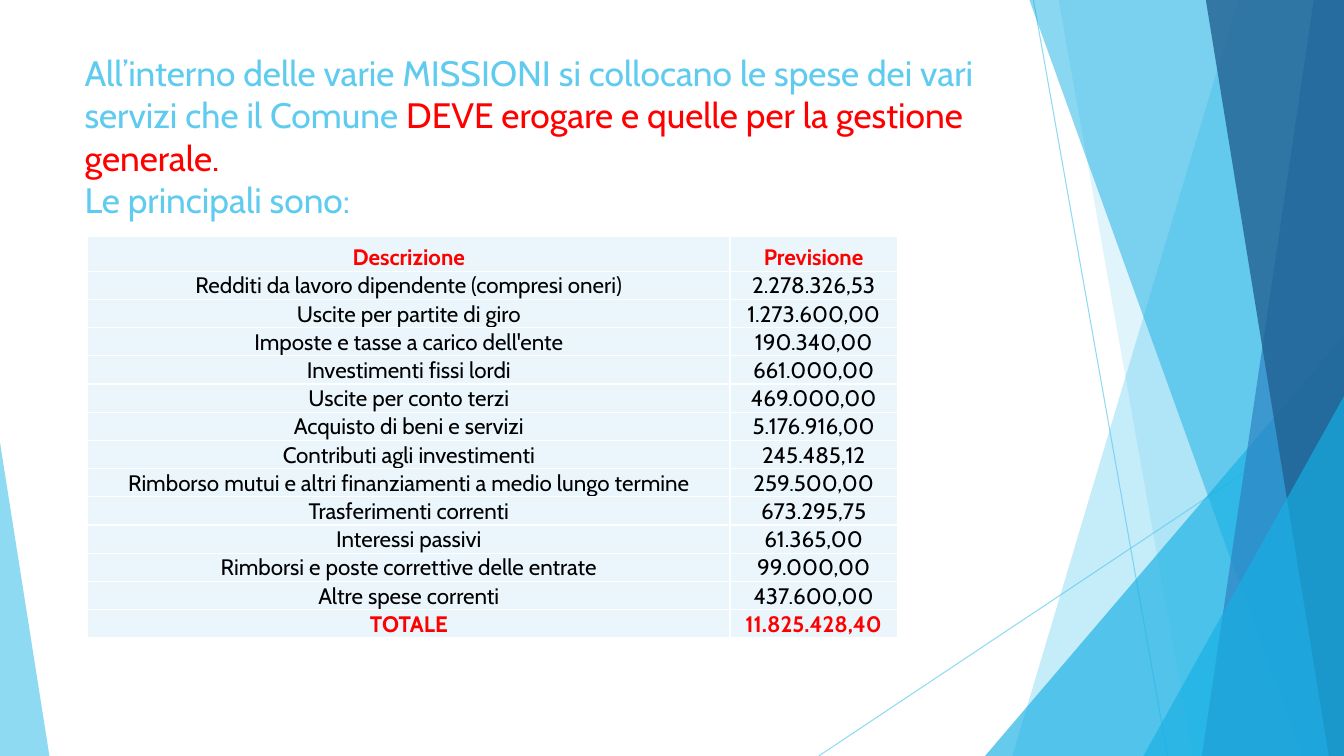
from collections import namedtuple

from lxml.etree import SubElement
from pptx import Presentation
from pptx.dml.color import RGBColor
from pptx.enum.shapes import MSO_CONNECTOR as Connector, MSO_SHAPE as Preset
from pptx.enum.text import MSO_ANCHOR as Anchor, PP_ALIGN as Align
from pptx.oxml.ns import qn
from pptx.util import Pt

EMU_PER_PX = 9144
FONT = "Cabin"
COLOURS = {
    "sky": "5FCBEF",
    "cyan": "17B0E4",
    "blue": "2E83C3",
    "navy": "226292",
    "red": "FF0000",
    "black": "000000",
    "white": "FFFFFF",
    "cell": "EAF6FC",
}
Box = namedtuple("Box", "left top width height")

PAGE = Box(0, 0, 1333, 750)
RIGHT_BAND = Box(812, 0, 521, 750)
LEFT_WEDGE = Box(0, 439, 49, 311)
TITLE = Box(74, 46, 940, 144)
TABLE = Box(87, 235, 803, 398)

TITLE_SPANS = [
    ("All’interno delle varie MISSIONI si collocano le spese dei vari servizi che il Comune ", "sky"),
    ("DEVE erogare e quelle per la gestione generale.", "red"),
    (None, None),
    ("Le principali sono:", "sky"),
]
EXPENSES = [
    ("Descrizione", "Previsione"),
    ("Redditi da lavoro dipendente (compresi oneri)", "2.278.326,53"),
    ("Uscite per partite di giro", "1.273.600,00"),
    ("Imposte e tasse a carico dell'ente", "190.340,00"),
    ("Investimenti fissi lordi", "661.000,00"),
    ("Uscite per conto terzi", "469.000,00"),
    ("Acquisto di beni e servizi", "5.176.916,00"),
    ("Contributi agli investimenti", "245.485,12"),
    ("Rimborso mutui e altri finanziamenti a medio lungo termine", "259.500,00"),
    ("Trasferimenti correnti", "673.295,75"),
    ("Interessi passivi", "61.365,00"),
    ("Rimborsi e poste correttive delle entrate", "99.000,00"),
    ("Altre spese correnti", "437.600,00"),
    ("TOTALE", "11.825.428,40"),
]


def px(*lengths):
    return [length * EMU_PER_PX for length in lengths]


def rgb(name):
    return RGBColor.from_string(COLOURS[name])


def set_values(target, values):
    for name, value in values.items():
        setattr(target, name, value)


def set_opacity(shape, percent):
    for colour in shape.element.spPr.iter(qn("a:srgbClr")):
        SubElement(colour, qn("a:alpha"), val=str(percent * 1000))


def paint(shape, colour, opacity):
    shape.shadow.inherit = False
    shape.fill.solid()
    shape.fill.fore_color.rgb = rgb(colour)
    shape.line.fill.background()
    set_opacity(shape, opacity)


def add_span(para, text, colour, size, bold=False):
    span = para.add_run()
    span.text = text
    set_values(span.font, {"name": FONT, "size": Pt(size), "bold": bold})
    span.font.color.rgb = rgb(colour)


def add_ray(page, box, start, end):
    ends = px(box.left + start[0], box.top + start[1], box.left + end[0], box.top + end[1])
    ray = page.shapes.add_connector(Connector.STRAIGHT, *ends)
    ray.line.width = Pt(0.75)
    ray.line.color.rgb = rgb("sky")
    set_opacity(ray, 70)
    SubElement(ray.element.spPr, qn("a:effectLst"))


def add_panel(page, box, top_x, bottom_x, colour, opacity):
    right, bottom = box.left + box.width, box.top + box.height
    builder = page.shapes.build_freeform(box.left + top_x, box.top, scale=EMU_PER_PX)
    builder.add_line_segments([(right, box.top), (right, bottom), (box.left + bottom_x, bottom)])
    paint(builder.convert_to_shape(), colour, opacity)


def add_wedge(page, box, peak, colour, opacity):
    wedge = page.shapes.add_shape(Preset.ISOSCELES_TRIANGLE, *px(*box))
    wedge.adjustments[0] = peak
    paint(wedge, colour, opacity)


def add_corner_wedge(page, box, x, y):
    corner = Box(box.left + x, box.top + y, box.width - x, box.height - y)
    add_wedge(page, corner, 1, "cyan", 66)


def add_right_band(page, box):
    add_ray(page, box, (213, 0), (346, box.height))
    add_ray(page, box, (box.width, 403), (0, box.height))
    add_panel(page, box, 416, 192, "sky", 36)
    add_panel(page, box, 238, 371, "sky", 20)
    add_corner_wedge(page, box, 165, 333)
    add_panel(page, box, 209, 479, "cyan", 50)
    add_panel(page, box, 491, 380, "blue", 70)
    add_panel(page, box, 384, 506, "navy", 80)
    add_corner_wedge(page, box, 322, 393)


def add_title(page, box):
    frame = page.shapes.add_textbox(*px(*box)).text_frame
    set_values(frame, {"word_wrap": True, "vertical_anchor": Anchor.TOP})
    para = frame.paragraphs[0]
    for text, colour in TITLE_SPANS:
        if text is None:
            para.add_line_break()
        else:
            add_span(para, text, colour, 25.2)


def add_borders(cell):
    properties = cell._tc.get_or_add_tcPr()
    for side in "LRTB":
        border = SubElement(properties, qn(f"a:ln{side}"), w=str(Pt(1)))
        fill = SubElement(border, qn("a:solidFill"))
        SubElement(fill, qn("a:srgbClr"), val=COLOURS["white"])


def fill_cell(cell, text, emphasised):
    inset = px(1)[0]
    set_values(cell, {
        "vertical_anchor": Anchor.BOTTOM,
        "margin_left": inset,
        "margin_right": inset,
        "margin_top": inset,
        "margin_bottom": 0,
    })
    add_borders(cell)
    cell.fill.solid()
    cell.fill.fore_color.rgb = rgb("cell")
    para = cell.text_frame.paragraphs[0]
    para.alignment = Align.CENTER
    add_span(para, text, "red" if emphasised else "black", 16, emphasised)


def add_expense_table(page, box):
    last = len(EXPENSES) - 1
    table = page.shapes.add_table(len(EXPENSES), 2, *px(*box)).table
    set_values(table, {"first_row": False, "horz_banding": False})
    amount_width, row_height = 166, 28
    for column, width in zip(table.columns, px(box.width - amount_width, amount_width)):
        column.width = width
    header_height = box.height - last * row_height
    for index, (row, texts) in enumerate(zip(table.rows, EXPENSES)):
        row.height = px(row_height if index else header_height)[0]
        for cell, text in zip(row.cells, texts):
            fill_cell(cell, text, index in (0, last))


def main():
    deck = Presentation()
    width, height = px(PAGE.width, PAGE.height)
    set_values(deck, {"slide_width": width, "slide_height": height})
    page = deck.slides.add_slide(deck.slide_layouts[6])
    add_right_band(page, RIGHT_BAND)
    add_wedge(page, LEFT_WEDGE, 0, "sky", 70)
    add_title(page, TITLE)
    add_expense_table(page, TABLE)
    deck.save("out.pptx")


if __name__ == "__main__":
    main()
